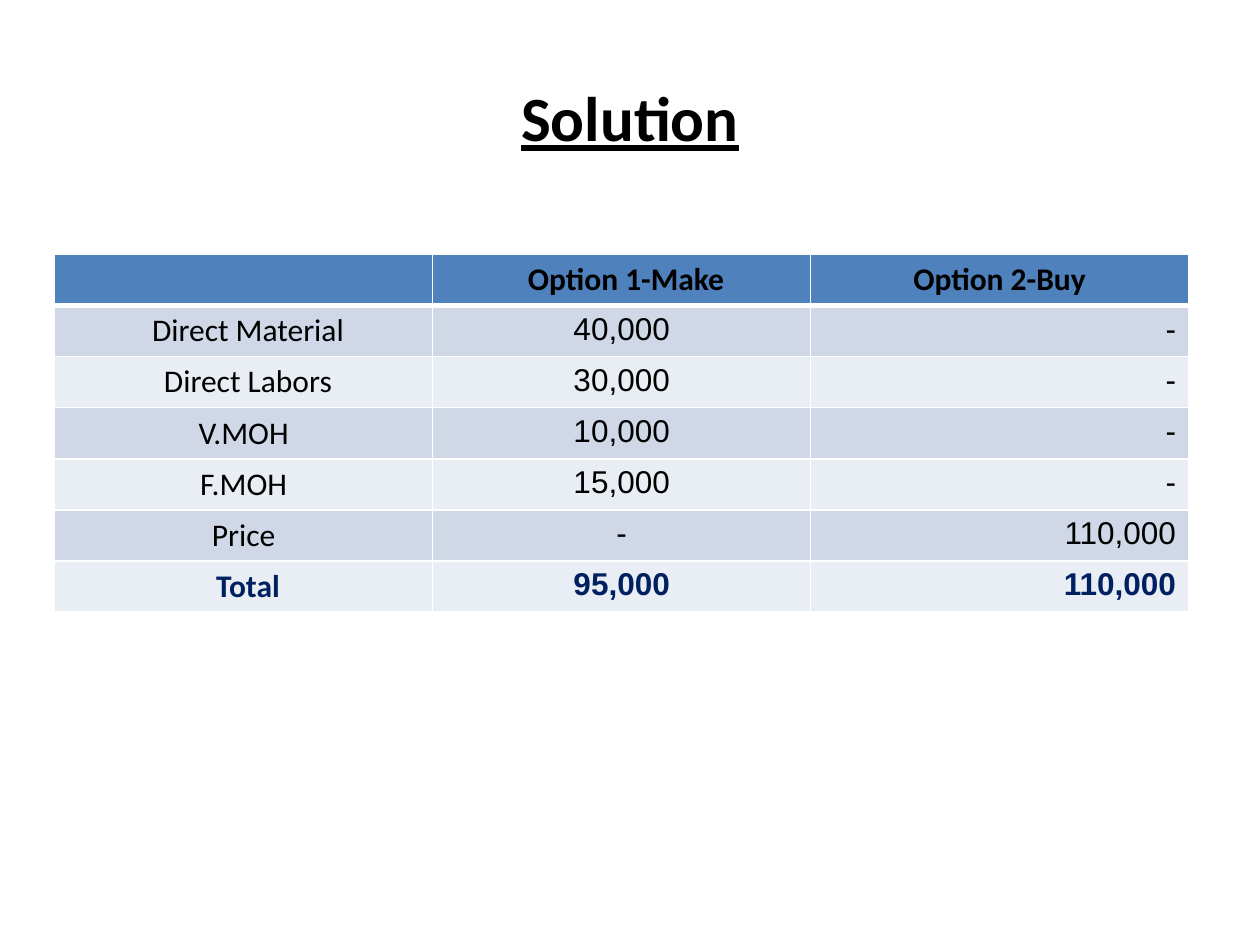
from dataclasses import dataclass

from lxml import etree
from pptx import Presentation
from pptx import util as u
from pptx.dml.color import RGBColor
from pptx.enum import text
from pptx.oxml import ns


@dataclass(frozen=True)
class Theme:
    font: str = "Calibri"
    complex_font: str = "Arial"
    title_size: int = 36
    body_size: int = 18
    ink: str = "000000"
    total: str = "002060"
    header: str = "4F81BD"
    bands: tuple = ("D0D8E8", "E9EDF4")
    border: str = "FFFFFF"
    thin: int = 1
    thick: int = 3


class SlideBuilder:
    """Adds styled right-to-left text and tables to one slide."""

    def __init__(self, slide, theme):
        self.slide = slide
        self.theme = theme

    def set_text(self, text_frame, words, size, color, align, bold=False, underline=False):
        text_frame.text = words
        paragraph = text_frame.paragraphs[0]
        paragraph.alignment = align
        paragraph._p.get_or_add_pPr().set("rtl", "1")
        for run in paragraph.runs:
            font = run.font
            font.name = self.theme.font
            font.size = u.Pt(size)
            font.bold = bold
            font.underline = underline
            font.color.rgb = RGBColor.from_string(color)
            complex_font = etree.SubElement(run._r.get_or_add_rPr(), ns.qn("a:cs"))
            complex_font.set("typeface", self.theme.complex_font)

    def title(self, words, left, top, width, height):
        shape = self.slide.shapes.add_textbox(*map(u.Pt, (left, top, width, height)))
        text_frame = shape.text_frame
        text_frame.word_wrap = True
        text_frame.vertical_anchor = text.MSO_ANCHOR.MIDDLE
        self.set_text(text_frame, words, self.theme.title_size, self.theme.ink,
                      text.PP_ALIGN.CENTER, bold=True, underline=True)

    def borders(self, cell, top, bottom):
        properties = cell._tc.get_or_add_tcPr()
        thin = self.theme.thin
        widths = {"lnL": thin, "lnR": thin, "lnT": top, "lnB": bottom}
        for side, width in widths.items():
            line = etree.SubElement(properties, ns.qn(f"a:{side}"), w=str(u.Pt(width)))
            fill = etree.SubElement(line, ns.qn("a:solidFill"))
            etree.SubElement(fill, ns.qn("a:srgbClr"), val=self.theme.border)

    def table(self, rows, left, top, column_width, row_height):
        theme = self.theme
        columns, last = len(rows[0]), len(rows) - 1
        frame = self.slide.shapes.add_table(
            len(rows), columns, u.Pt(left), u.Pt(top),
            u.Pt(column_width * columns), u.Pt(row_height * len(rows)))
        table = frame.table
        for column in table.columns:
            column.width = u.Pt(column_width)
        for r, values in enumerate(rows):
            table.rows[r].height = u.Pt(row_height)
            for c, value in enumerate(values):
                cell = table.cell(r, c)
                self.borders(cell, theme.thick if r == 1 else theme.thin,
                             theme.thick if r == 0 else theme.thin)
                cell.fill.solid()
                fill = theme.bands[(r - 1) % 2] if r else theme.header
                cell.fill.fore_color.rgb = RGBColor.from_string(fill)
                is_amount = r > 0 and c == columns - 1
                align = text.PP_ALIGN.RIGHT if is_amount else text.PP_ALIGN.CENTER
                color = theme.total if r == last else theme.ink
                self.set_text(cell.text_frame, value, theme.body_size, color, align,
                              bold=r in (0, last))


def main():
    presentation = Presentation()
    presentation.slide_width, presentation.slide_height = u.Pt(720), u.Pt(540)
    slide = presentation.slides.add_slide(presentation.slide_layouts[6])
    builder = SlideBuilder(slide, Theme())
    builder.title("Solution", 36, 21.6, 648, 90)
    costs = [
        ("", "Option 1-Make ", "Option 2-Buy"),
        ("Direct Material ", "40,000", "-"),
        ("Direct Labors ", "30,000", "-"),
        ("V.MOH", "10,000", "-"),
        ("F.MOH", "15,000", "-"),
        ("Price", "-", "110,000"),
        ("Total ", "95,000", "110,000"),
    ]
    builder.table(costs, left=31.2, top=145.4, column_width=216, row_height=29.2)
    presentation.save("out.pptx")


if __name__ == "__main__":
    main()
